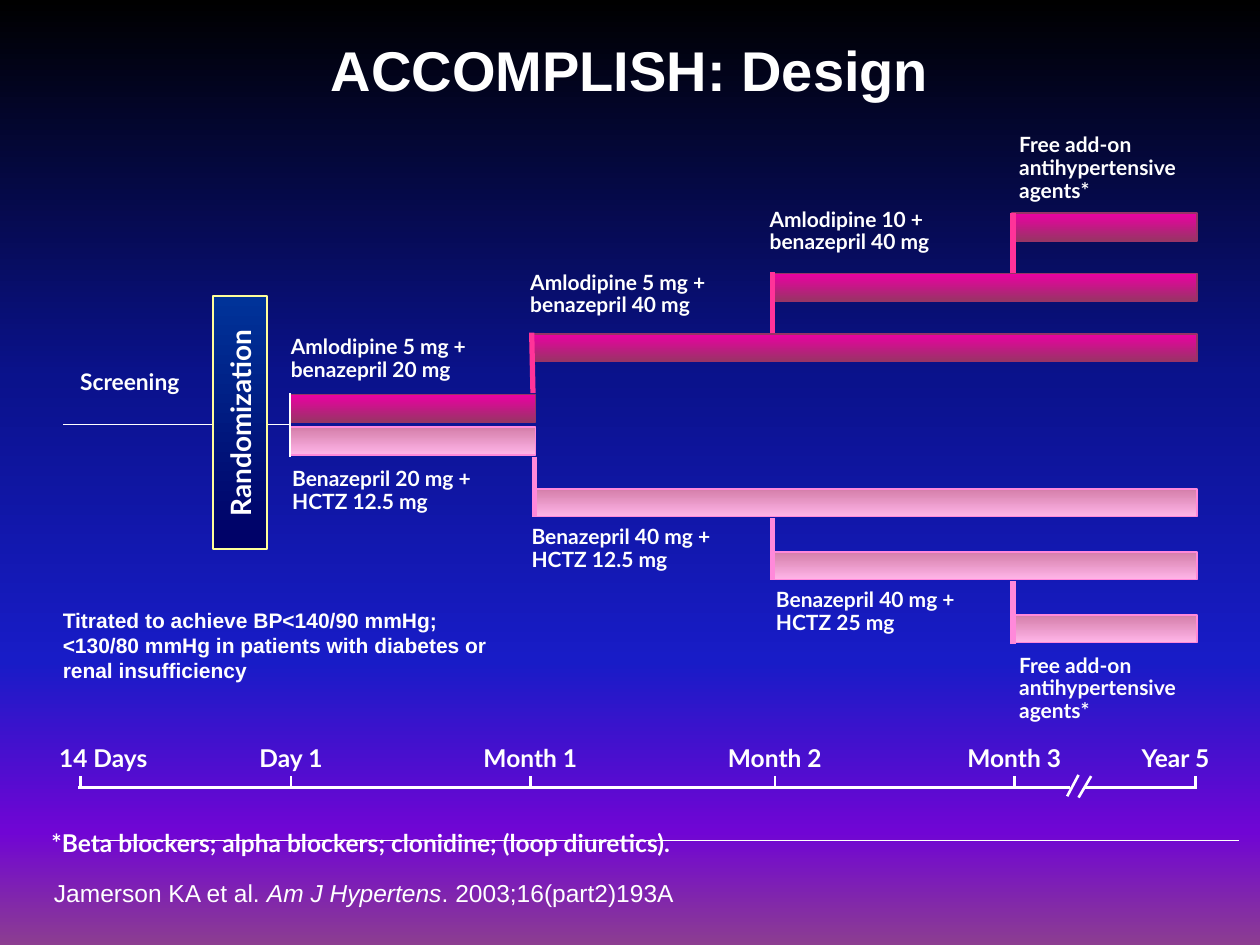
from lxml.etree import SubElement
from pptx import Presentation
from pptx.dml.color import RGBColor
from pptx.enum.shapes import MSO_CONNECTOR, MSO_SHAPE
from pptx.enum.text import MSO_ANCHOR, MSO_AUTO_SIZE, PP_ALIGN
from pptx.oxml.ns import qn
from pptx.util import Inches, Pt

THEME = {
    "white": "FFFFFF",
    "background": [(0, "000000"), (40, "0A128C"), (70, "181CC7"), (88, "7005D4"), (100, "8C3D91")],
    "box": {"stops": [(0, "000066"), (100, "003399")], "line": "FFFF99"},
    "amlodipine": {"stops": [(0, "EC00A3"), (100, "993366")], "line": "993366", "riser": "FF3399"},
    "hctz": {"stops": [(0, "D47EA9"), (100, "FFB5E8")], "line": "FF89DA", "riser": "FF89DA"},
    "title": {"name": "Arial", "size": Pt(32), "bold": True},
    "source": {"name": "Arial", "size": Pt(14), "bold": False},
    "note": {"name": "Arial", "size": Pt(12), "bold": True},
    "dose": {"name": "Lato", "size": Pt(12), "bold": True},
    "stage": {"name": "Lato", "size": Pt(13), "bold": True},
    "axis": {"name": "Lato", "size": Pt(14), "bold": True},
    "box_text": {"name": "Lato", "size": Pt(16), "bold": True},
}


def set_gradient(fill, element, stops, angle):
    fill.gradient()
    stop_list = next(element.iter(qn("a:gsLst")))
    for old in list(stop_list):
        stop_list.remove(old)
    for position, color in stops:
        gs = SubElement(stop_list, qn("a:gs"), pos=str(position * 1000))
        SubElement(gs, qn("a:srgbClr"), val=color)
    next(element.iter(qn("a:lin"))).set("ang", str(angle * 60000))


def write(sp, text, style, align=PP_ALIGN.LEFT, spacing=1.0, wrap=True, anchor=MSO_ANCHOR.TOP):
    tf = sp.text_frame
    tf.auto_size = MSO_AUTO_SIZE.NONE
    tf.word_wrap, tf.vertical_anchor = wrap, anchor
    p = tf.paragraphs[0]
    p.text = text
    p.alignment, p.line_spacing = align, spacing
    for r in p.runs:
        for key, value in THEME[style].items():
            setattr(r.font, key, value)
        r.font.color.rgb = RGBColor.from_string(THEME["white"])
    return p


prs = Presentation()
prs.slide_width, prs.slide_height = Inches(10), Inches(7.5)
s = prs.slides.add_slide(prs.slide_layouts[6])
set_gradient(s.background.fill, s._element, THEME["background"], 90)

# Treatment bars: left, top, width, arm
bars = [
    (2.3, 3.13, 1.95, "amlodipine"), (4.22, 2.65, 5.28, "amlodipine"),
    (6.14, 2.17, 3.36, "amlodipine"), (8.03, 1.69, 1.47, "amlodipine"),
    (2.3, 3.39, 1.95, "hctz"), (4.24, 3.88, 5.26, "hctz"),
    (6.14, 4.38, 3.36, "hctz"), (8.04, 4.88, 1.46, "hctz"),
]
for left, top, width, arm in bars:
    sp = s.shapes.add_shape(MSO_SHAPE.RECTANGLE, Inches(left), Inches(top), Inches(width), Inches(0.22))
    sp.shadow.inherit = False
    set_gradient(sp.fill, sp._element, THEME[arm]["stops"], 90)
    sp.line.color.rgb = RGBColor.from_string(THEME[arm]["line"])
    sp.line.width = Pt(1)

# Time axis: tick, label centre, label
ticks = [
    (0.64, 0.82, "14 Days"), (2.31, 2.31, "Day 1"), (4.21, 4.21, "Month 1"),
    (6.15, 6.15, "Month 2"), (8.05, 8.05, "Month 3"), (9.49, 9.33, "Year 5"),
]
for tick, centre, label in ticks:
    sp = s.shapes.add_textbox(Inches(centre - 0.5), Inches(5.85), Inches(1), Inches(0.33))
    write(sp, label, "axis", PP_ALIGN.CENTER, wrap=False)

# Lines: x1, y1, x2, y2, colour, points
white = THEME["white"]
pink, rose = THEME["amlodipine"]["riser"], THEME["hctz"]["riser"]
lines = [
    (0.75, 6.67, 9.83, 6.67, white, 0.75),  # footer rule
    (0.5, 3.37, 2.3, 3.37, white, 1),  # screening
    (2.3, 3.12, 2.3, 3.63, white, 1),  # start of treatment
    (0.62, 6.25, 8.49, 6.25, white, 1.5),  # axis and its break
    (8.61, 6.25, 9.5, 6.25, white, 1.5),
    (8.56, 6.15, 8.47, 6.32, white, 1.5),
    (8.66, 6.16, 8.56, 6.33, white, 1.5),
    (4.22, 2.64, 4.23, 3.12, pink, 3),  # steps up
    (6.13, 2.16, 6.13, 2.64, pink, 3),
    (8.04, 1.69, 8.04, 2.17, pink, 3),
    (4.24, 3.63, 4.24, 4.1, rose, 3),  # steps down
    (6.13, 4.11, 6.13, 4.6, rose, 3),
    (8.04, 4.61, 8.04, 5.11, rose, 3),
] + [(tick, 6.16, tick, 6.24, white, 1.5) for tick, _, _ in ticks]
for x1, y1, x2, y2, color, points in lines:
    line = s.shapes.add_connector(MSO_CONNECTOR.STRAIGHT, Inches(x1), Inches(y1), Inches(x2), Inches(y2))
    line.line.color.rgb = RGBColor.from_string(color)
    line.line.width = Pt(points)
    SubElement(line._element.spPr, qn("a:effectLst"))

# Randomization box
sp = s.shapes.add_shape(MSO_SHAPE.RECTANGLE, Inches(0.9), Inches(3.14), Inches(2.01), Inches(0.43))
sp.rotation = 270
sp.shadow.inherit = False
set_gradient(sp.fill, sp._element, THEME["box"]["stops"], 0)
sp.line.color.rgb = RGBColor.from_string(THEME["box"]["line"])
sp.line.width = Pt(1)
write(sp, "Randomization", "box_text", PP_ALIGN.CENTER, wrap=False, anchor=MSO_ANCHOR.MIDDLE)

# Dose labels
doses = [
    (2.21, 2.62, 1.99, 0.46, "Amlodipine 5 mg +\nbenazepril 20 mg"),
    (4.11, 2.11, 1.99, 0.46, "Amlodipine 5 mg +\nbenazepril 40 mg"),
    (6.01, 1.61, 1.99, 0.46, "Amlodipine 10 +\nbenazepril 40 mg"),
    (7.99, 1.02, 1.69, 0.64, "Free add-on antihypertensive agents*"),
    (2.22, 3.67, 1.91, 0.46, "Benazepril 20 mg + HCTZ 12.5 mg"),
    (4.12, 4.13, 1.91, 0.46, "Benazepril 40 mg + HCTZ 12.5 mg"),
    (6.06, 4.63, 1.91, 0.46, "Benazepril 40 mg + HCTZ 25 mg"),
    (7.99, 5.15, 1.79, 0.64, "Free add-on antihypertensive agents*"),
]
for left, top, width, height, text in doses:
    sp = s.shapes.add_textbox(Inches(left), Inches(top), Inches(width), Inches(height))
    write(sp, text, "dose", spacing=0.9)

# Title, screening label and notes
sp = s.shapes.add_textbox(Inches(0), Inches(0.23), Inches(10), Inches(0.63))
write(sp, "ACCOMPLISH: Design", "title", PP_ALIGN.CENTER, anchor=MSO_ANCHOR.MIDDLE)
sp = s.shapes.add_textbox(Inches(0.48), Inches(2.89), Inches(1.1), Inches(0.3))
write(sp, "Screening", "stage", PP_ALIGN.CENTER, 0.9, wrap=False)
sp = s.shapes.add_textbox(Inches(0.4), Inches(4.77), Inches(3.7), Inches(0.71))
write(sp, "Titrated to achieve BP<140/90 mmHg; <130/80 mmHg in patients with diabetes or renal insufficiency", "note")
sp = s.shapes.add_textbox(Inches(0.31), Inches(6.52), Inches(5.91), Inches(0.33))
write(sp, "*Beta blockers; alpha blockers; clonidine; (loop diuretics).", "axis", wrap=False)

# Source, with the journal in italics
sp = s.shapes.add_textbox(Inches(0.33), Inches(6.92), Inches(5.54), Inches(0.33))
p = write(sp, "Jamerson KA et al. ", "source")
for text, italic in [("Am J Hypertens", True), (". 2003;16(part2)193A", False)]:
    r = p.add_run()
    r.text = text
    for key, value in THEME["source"].items():
        setattr(r.font, key, value)
    r.font.italic = italic
    r.font.color.rgb = RGBColor.from_string(white)

prs.save("out.pptx")
